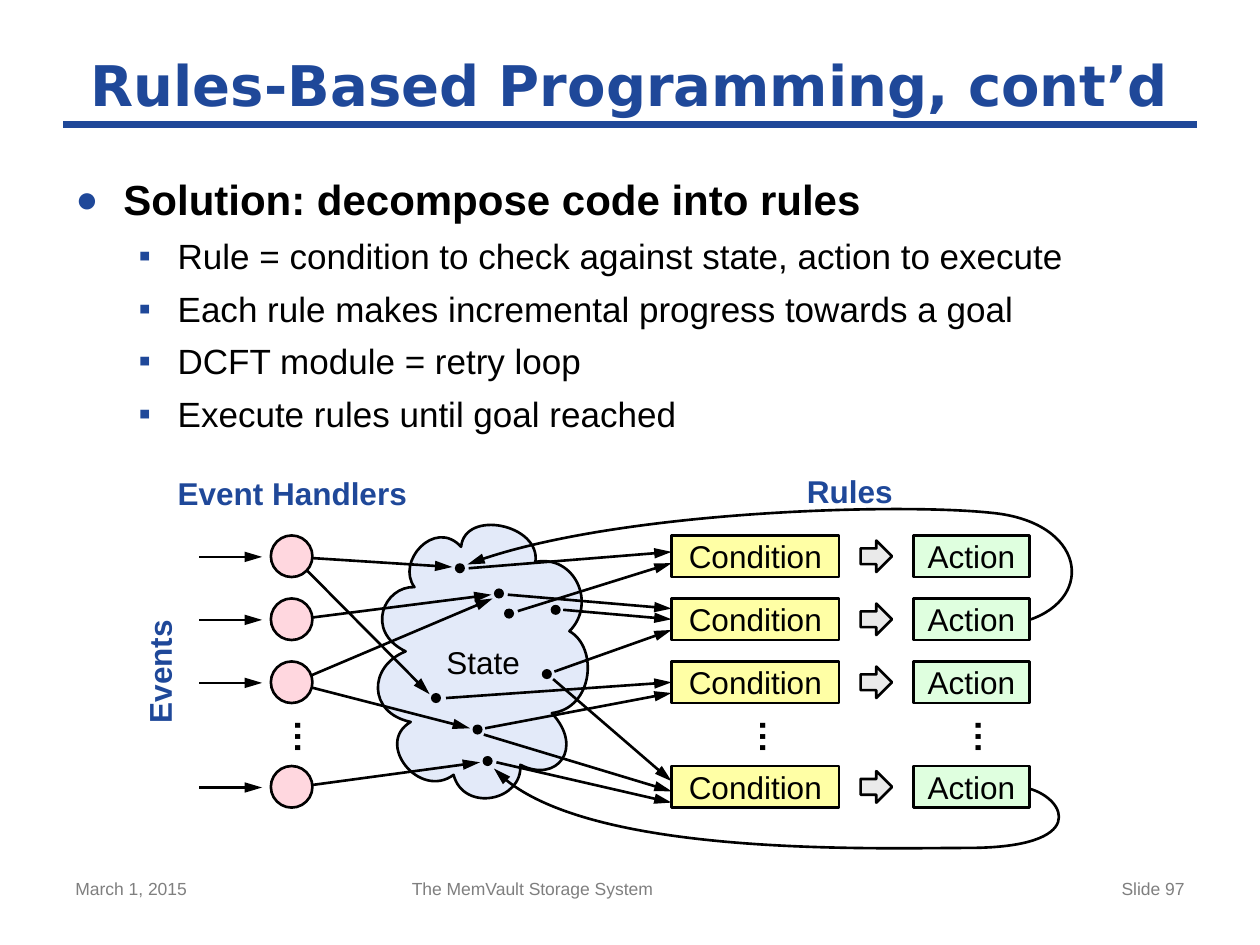
from lxml import etree
from pptx import Presentation
from pptx.dml.color import RGBColor
from pptx.enum.shapes import MSO_CONNECTOR, MSO_SHAPE
from pptx.enum.text import MSO_ANCHOR, MSO_AUTO_SIZE, PP_ALIGN
from pptx.oxml.ns import qn
from pptx.util import Inches, Pt

LEFT, MID, RIGHT = PP_ALIGN.LEFT, PP_ALIGN.CENTER, PP_ALIGN.RIGHT
RECT, OVAL, ARROW = MSO_SHAPE.RECTANGLE, MSO_SHAPE.OVAL, MSO_SHAPE.RIGHT_ARROW
BLACK = RGBColor(0x00, 0x00, 0x00)
BLUE = RGBColor(0x1F, 0x48, 0x99)
GRAY = RGBColor(0x7F, 0x7F, 0x7F)
PALE = RGBColor(0xE3, 0xEA, 0xF9)
YELLOW = RGBColor(0xFF, 0xFF, 0xA5)
GREEN = RGBColor(0xDF, 0xFF, 0xDF)
SILVER = RGBColor(0xEA, 0xEA, 0xEA)
PINK = RGBColor(0xFF, 0xD7, 0xDF)

TITLE = "Rules-Based Programming, cont’d"
POINTS = [
    (0, "Solution: decompose code into rules"),
    (1, "Rule = condition to check against state, action to execute"),
    (1, "Each rule makes incremental progress towards a goal"),
    (1, "DCFT module = retry loop"),
    (1, "Execute rules until goal reached"),
]
STYLES = [
    dict(size=24, bold=True, before=12, left=0.38, hang=0.38, mark="●", scale=90),
    dict(size=20, bold=False, before=6, left=0.81, hang=0.31, mark="▪", scale=100),
]
FOOTER = [
    ("March 1, 2015", 0.5, 2.33, LEFT),
    ("The MemVault Storage System", 3.17, 3.75, LEFT),
    ("Slide 97", 7.17, 2.33, RIGHT),
]
LABELS = [
    ("Event Handlers", (1.37, 3.76, 1.9, 0.3), 0),
    ("Rules", (5.33, 3.75, 2.83, 0.3), 0),
    ("Events", (0.18, 5.18, 2.17, 0.3), 270),
]
ROWS = [4.25, 4.75, 5.25, 6.08]
HIGH, HALF = 0.33, 0.17
MORE = [2.13, 5.82, 7.53]
CLOUD = (3, 4.17, 1.67, 2.17), (4.25, 4.46), [
    (4.56, 4.4, 4.74, 4.79, 4.52, 5.01),
    (4.75, 5.14, 4.71, 5.62, 4.38, 5.66),
    (4.64, 5.94, 4.42, 6.22, 4.13, 6.07),
    (4.15, 6.36, 3.68, 6.45, 3.6, 6.15),
    (3.33, 6.35, 2.97, 5.9, 3.26, 5.73),
    (2.92, 5.66, 2.92, 5.29, 3.22, 5.17),
    (2.89, 5.01, 3.05, 4.65, 3.29, 4.66),
    (3.14, 4.46, 3.45, 4.11, 3.66, 4.34),
    (3.69, 4.04, 4.29, 4.16, 4.25, 4.46),
]
LOOPS = [
    ((3.71, 4.04, 4.8, 0.88), (8.17, 4.92),
     [(8.7, 4.74, 8.61, 4.14, 7.87, 4.07), (7.12, 3.99, 4.8, 4.06, 3.71, 4.48)]),
    ((3.92, 6.1, 4.48, 0.64), (8.17, 6.26),
     [(8.46, 6.34, 8.65, 6.73, 7.68, 6.73), (6.97, 6.73, 4.56, 6.81, 3.92, 6.1)]),
]
DOTS = [(3.61, 4.47), (3.92, 4.67), (3.42, 5.5), (3.75, 5.75),
        (3.83, 6), (4.3, 5.31), (4.37, 4.8), (4, 4.83)]
WRITES = [(0, 3.59, 4.5), (0, 3.41, 5.51), (1, 3.9, 4.72),
          (2, 3.91, 4.75), (2, 3.73, 5.78), (3, 3.81, 6.05)]
READS = [(3.94, 6.05, 6.37), (3.84, 5.83, 6.28), (4.39, 5.39, 6.2),
         (3.85, 5.78, 5.5), (4.4, 5.33, 5), (4.03, 4.72, 4.83),
         (4.11, 4.85, 4.47), (3.72, 4.51, 4.38)]
JOINS = [(3.54, 5.54, 2), (4.47, 4.84, 1)]


def style(para, size, color=BLACK, bold=False, align=LEFT, face="Arial"):
    para.alignment = align
    font = para.font
    font.name, font.size, font.bold = face, Pt(size), bold
    font.color.rgb = color


def inset(frame):
    frame.margin_left = frame.margin_right = 0
    frame.margin_top = frame.margin_bottom = 0


def place(shape, *box):
    shape.left, shape.top, shape.width, shape.height = map(Inches, box)


def paint(shape, fill):
    shape.shadow.inherit = False
    shape.fill.solid()
    shape.fill.fore_color.rgb = fill
    shape.line.color.rgb = BLACK
    shape.line.width = Pt(1.5)


def letter(shape, text):
    frame = shape.text_frame
    inset(frame)
    frame.vertical_anchor = MSO_ANCHOR.MIDDLE
    frame.text = text
    style(frame.paragraphs[0], 18, align=MID)


def draw(shapes, kind, box, fill, text=""):
    shape = shapes.add_shape(kind, *map(Inches, box))
    paint(shape, fill)
    if text:
        letter(shape, text)
    return shape


def write(shapes, text, box, wrap, size, **look):
    shape = shapes.add_textbox(*map(Inches, box))
    frame = shape.text_frame
    frame.word_wrap = wrap
    frame.text = text
    style(frame.paragraphs[0], size, **look)
    return shape


def point(shape):
    line = shape.element.spPr.find(qn("a:ln"))
    etree.SubElement(line, qn("a:tailEnd"), type="triangle", w="med", len="lg")


def link(shapes, *ends, color=BLACK, width=1.5):
    line = shapes.add_connector(MSO_CONNECTOR.STRAIGHT, *map(Inches, ends))
    line.line.color.rgb = color
    line.line.width = Pt(width)
    etree.SubElement(line.element.spPr, qn("a:effectLst"))
    return line


def curve(shapes, box, start, parts, close):
    left, top, width, height = box
    frame = shapes.build_freeform(Inches(left), Inches(top))
    frame.add_line_segments([(Inches(left + width), Inches(top + height))], close=False)
    shape = frame.convert_to_shape()
    track = next(shape.element.iter(qn("a:path")))
    for step in list(track):
        track.remove(step)
    for tag, spots in [("a:moveTo", start)] + [("a:cubicBezTo", p) for p in parts]:
        step = etree.SubElement(track, qn(tag))
        for x, y in zip(spots[::2], spots[1::2]):
            etree.SubElement(step, qn("a:pt"), x=str(Inches(x - left)),
                             y=str(Inches(y - top)))
    if close:
        etree.SubElement(track, qn("a:close"))
    paint(shape, PALE)
    return shape


def bullet(para, look):
    para.space_before = Pt(look["before"])
    props = para._p.get_or_add_pPr()
    props.set("marL", str(Inches(look["left"])))
    props.set("indent", str(-Inches(look["hang"])))
    tint = etree.SubElement(props, qn("a:buClr"))
    etree.SubElement(tint, qn("a:srgbClr"), val=str(BLUE))
    etree.SubElement(props, qn("a:buSzPct"), val=str(look["scale"] * 1000))
    etree.SubElement(props, qn("a:buFont"), typeface="Arial")
    etree.SubElement(props, qn("a:buChar"), char=look["mark"])


def main():
    deck = Presentation()
    deck.slide_width, deck.slide_height = Inches(10), Inches(7.5)
    slide = deck.slides.add_slide(deck.slide_layouts[1])
    shapes = slide.shapes
    title, body = shapes.title, slide.placeholders[1]
    place(title, 0.5, 0.33, 9, 0.67)
    title.text_frame.text = TITLE
    title.text_frame.vertical_anchor = MSO_ANCHOR.MIDDLE
    style(title.text_frame.paragraphs[0], 32, BLUE, True, MID, "DejaVu Sans")
    place(body, 0.5, 1.33, 9, 5.37)
    body.text_frame.text = "\n".join(text for _, text in POINTS)
    for para, (level, _) in zip(body.text_frame.paragraphs, POINTS):
        look = STYLES[level]
        para.level = level
        bullet(para, look)
        style(para, look["size"], bold=look["bold"])
    for shape in (title, body):
        shape.text_frame.auto_size = MSO_AUTO_SIZE.NONE
    link(shapes, 0.5, 0.99, 9.5, 0.99, color=BLUE, width=4)
    for text, left, width, align in FOOTER:
        write(shapes, text, (left, 6.92, width, 0.43), True, 10,
              color=GRAY, align=align)

    letter(curve(shapes, *CLOUD, True), "State")
    tests = []
    for top in ROWS:
        rule = shapes.add_group_shape().shapes
        tests.append(draw(rule, RECT, (5.33, top, 1.33, HIGH), YELLOW, "Condition"))
        draw(rule, RECT, (7.25, top, 0.92, HIGH), GREEN, "Action")
        draw(rule, ARROW, (6.83, top + 0.04, 0.25, 0.25), SILVER)
    for left in MORE:
        dots = write(shapes, "…", (left, 5.66, 0.54, 0.38), False, 20,
                     bold=True, align=MID)
        dots.element.txBody.bodyPr.set("vert", "vert")
    for text, box, turn in LABELS:
        label = write(shapes, text, box, False, 18, color=BLUE, bold=True, align=MID)
        inset(label.text_frame)
        label.rotation = turn
    for left, top in DOTS:
        draw(shapes, OVAL, (left, top, 0.08, 0.08), BLACK).line.fill.background()
    for top in ROWS:
        point(link(shapes, 1.58, top + HALF, 2.08, top + HALF))
    for row, x, y in WRITES:
        point(link(shapes, 2.33, ROWS[row] + HALF, x, y))
    for x, y, end in READS:
        point(link(shapes, x, y, 5.33, end))
    for x, y, row in JOINS:
        line = link(shapes, x, y, 5.33, ROWS[row] + HALF)
        line.end_connect(tests[row], 1)
        point(line)
    for loop in LOOPS:
        arc = curve(shapes, *loop, False)
        arc.fill.background()
        point(arc)
    for top in ROWS:
        draw(shapes, OVAL, (2.15, top, HIGH, HIGH), PINK)
    deck.save("out.pptx")


if __name__ == "__main__":
    main()
